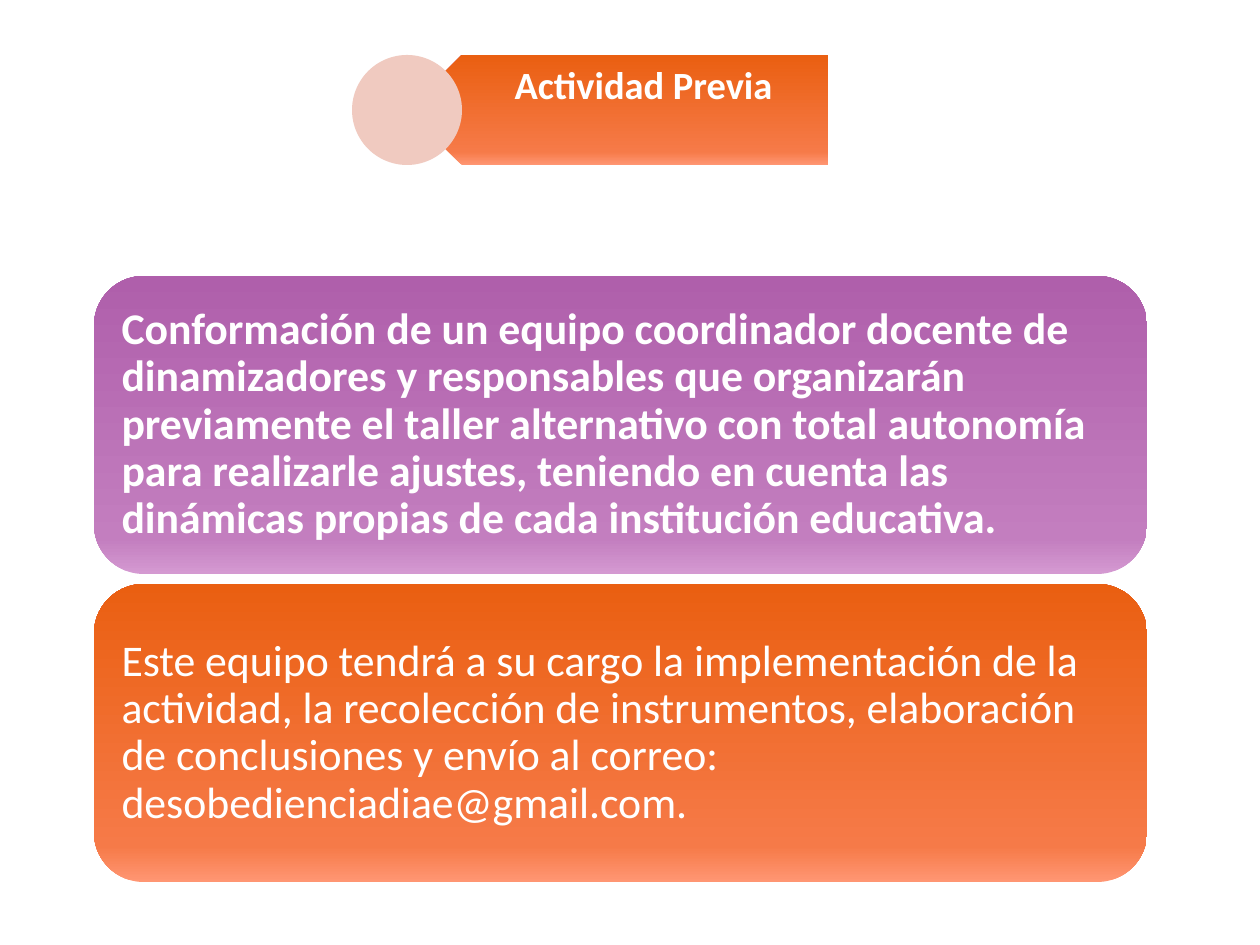
from lxml import etree
from pptx import Presentation
from pptx.dml.color import RGBColor
from pptx.enum.shapes import MSO_SHAPE
from pptx.enum.text import MSO_ANCHOR, MSO_AUTO_SIZE, PP_ALIGN
from pptx.oxml.ns import qn
from pptx.util import Emu, Pt

ROUNDED, PENTAGON, OVAL = MSO_SHAPE.ROUNDED_RECTANGLE, MSO_SHAPE.PENTAGON, MSO_SHAPE.OVAL
TOP, MIDDLE = MSO_ANCHOR.TOP, MSO_ANCHOR.MIDDLE
LEFT, CENTER = PP_ALIGN.LEFT, PP_ALIGN.CENTER

WHITE = RGBColor(0xFF, 0xFF, 0xFF)
PINK = RGBColor(0xF0, 0xCA, 0xC0)
PURPLES = (RGBColor(0xD4, 0x99, 0xD1), RGBColor(0xC3, 0x7E, 0xBF), RGBColor(0xAF, 0x5F, 0xAB))
ORANGES = (RGBColor(0xFF, 0x96, 0x73), RGBColor(0xF6, 0x7A, 0x48), RGBColor(0xEA, 0x5F, 0x11))
GRADIENT_STOPS = (0, 12, 100)

HEADING = "Actividad Previa"
CARDS = [
    ("Conformación de un equipo coordinador docente de dinamizadores y responsables "
     "que organizarán previamente el taller alternativo con total autonomía para "
     "realizarle ajustes, teniendo en cuenta las dinámicas propias de cada "
     "institución educativa.", PURPLES, True),
    ("Este equipo tendrá a su cargo la implementación de la actividad, la recolección "
     "de instrumentos, elaboración de conclusiones y envío al correo: "
     "desobedienciadiae@gmail.com.", ORANGES, False),
]

CARD_LEFT, CARD_TOP, CARD_WIDTH, CARD_HEIGHT, CARD_GAP = 94, 276, 1053, 298, 10
HEADER_TOP, HEADER_HEIGHT = 55, 110
CIRCLE_LEFT = 352
RIBBON_LEFT, RIBBON_WIDTH = CIRCLE_LEFT + HEADER_HEIGHT // 2, 421
HEADING_LEFT, HEADING_WIDTH = 433, 394


def px(length):
    return Emu(round(length * 914400 / 126))


def add_plain_shape(slide, kind, *box):
    shape = slide.shapes.add_shape(kind, *map(px, box))
    shape.shadow.inherit = False
    shape.line.fill.background()
    return shape


def fill_gradient(shape, colours):
    shape.fill.gradient()
    shape.fill.gradient_angle = 90
    stops = shape._element.spPr.find(qn("a:gradFill")).find(qn("a:gsLst"))
    for stop in list(stops):
        stops.remove(stop)
    for position, colour in zip(GRADIENT_STOPS, colours):
        stop = etree.SubElement(stops, qn("a:gs"), pos=str(position * 1000))
        etree.SubElement(stop, qn("a:srgbClr"), val=str(colour))


def write(shape, text, size, bold, align, anchor, insets):
    frame = shape.text_frame
    frame.text = text
    frame.word_wrap = True
    frame.auto_size = MSO_AUTO_SIZE.NONE
    frame.vertical_anchor = anchor
    frame.margin_left, frame.margin_top, frame.margin_right, frame.margin_bottom = map(px, insets)
    paragraph = frame.paragraphs[0]
    paragraph.alignment = align
    paragraph.line_spacing = 0.9
    paragraph.font.name = "Calibri"
    paragraph.font.size = Pt(size)
    paragraph.font.bold = bold
    paragraph.font.color.rgb = WHITE


def main():
    deck = Presentation()
    deck.slide_width, deck.slide_height = px(1260), px(945)
    slide = deck.slides.add_slide(deck.slide_layouts[5])

    for row, (text, colours, bold) in enumerate(CARDS):
        top = CARD_TOP + row * (CARD_HEIGHT + CARD_GAP)
        card = add_plain_shape(slide, ROUNDED, CARD_LEFT, top, CARD_WIDTH, CARD_HEIGHT)
        fill_gradient(card, colours)
        write(card, text, 25, bold, LEFT, MIDDLE, (13, 13, 13, 13))

    ribbon = add_plain_shape(slide, PENTAGON, RIBBON_LEFT, HEADER_TOP, RIBBON_WIDTH, HEADER_HEIGHT)
    ribbon._element.spPr.find(qn("a:xfrm")).set("flipH", "1")
    fill_gradient(ribbon, ORANGES)

    heading = slide.shapes.title
    heading.left, heading.top = px(HEADING_LEFT), px(HEADER_TOP)
    heading.width, heading.height = px(HEADING_WIDTH), px(HEADER_HEIGHT)
    write(heading, HEADING, 22, True, CENTER, TOP, (48, 11, 21, 11))
    slide.shapes._spTree.append(heading._element)

    circle = add_plain_shape(slide, OVAL, CIRCLE_LEFT, HEADER_TOP, HEADER_HEIGHT, HEADER_HEIGHT)
    circle.fill.solid()
    circle.fill.fore_color.rgb = PINK

    deck.save("out.pptx")


if __name__ == "__main__":
    main()
